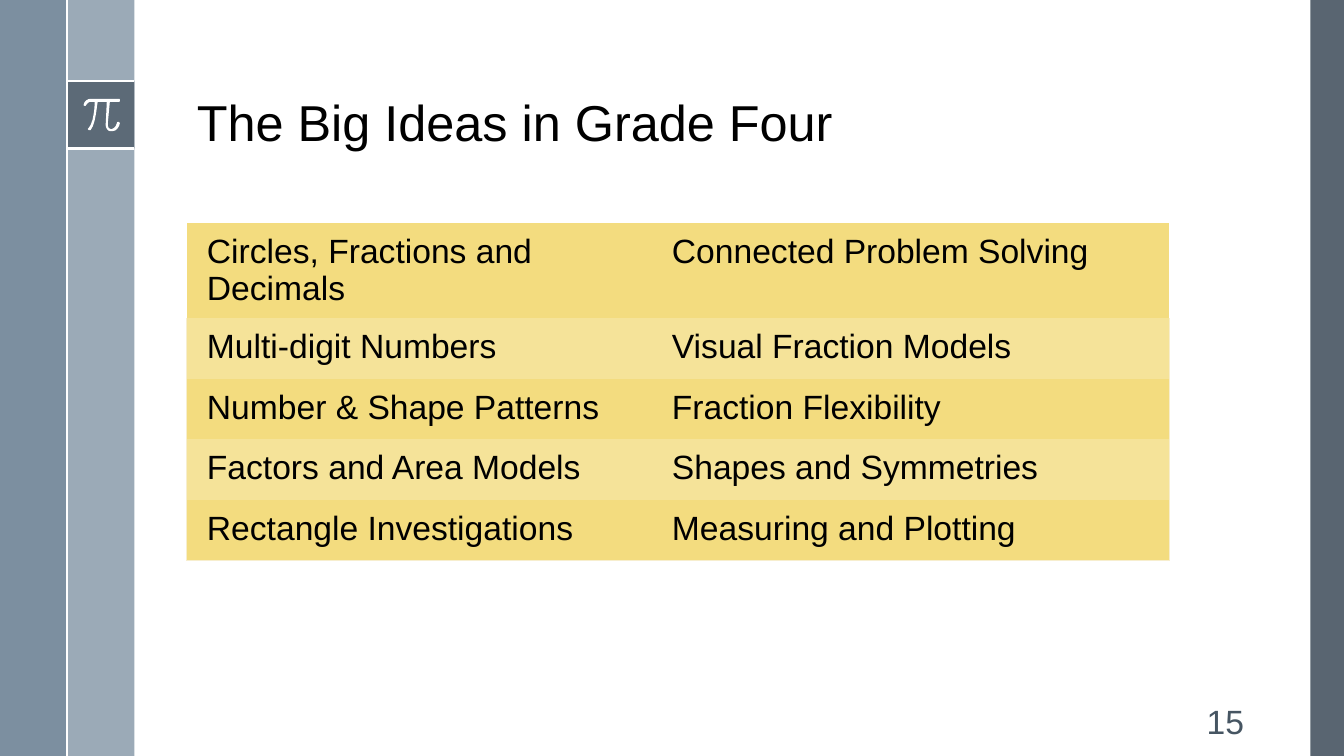
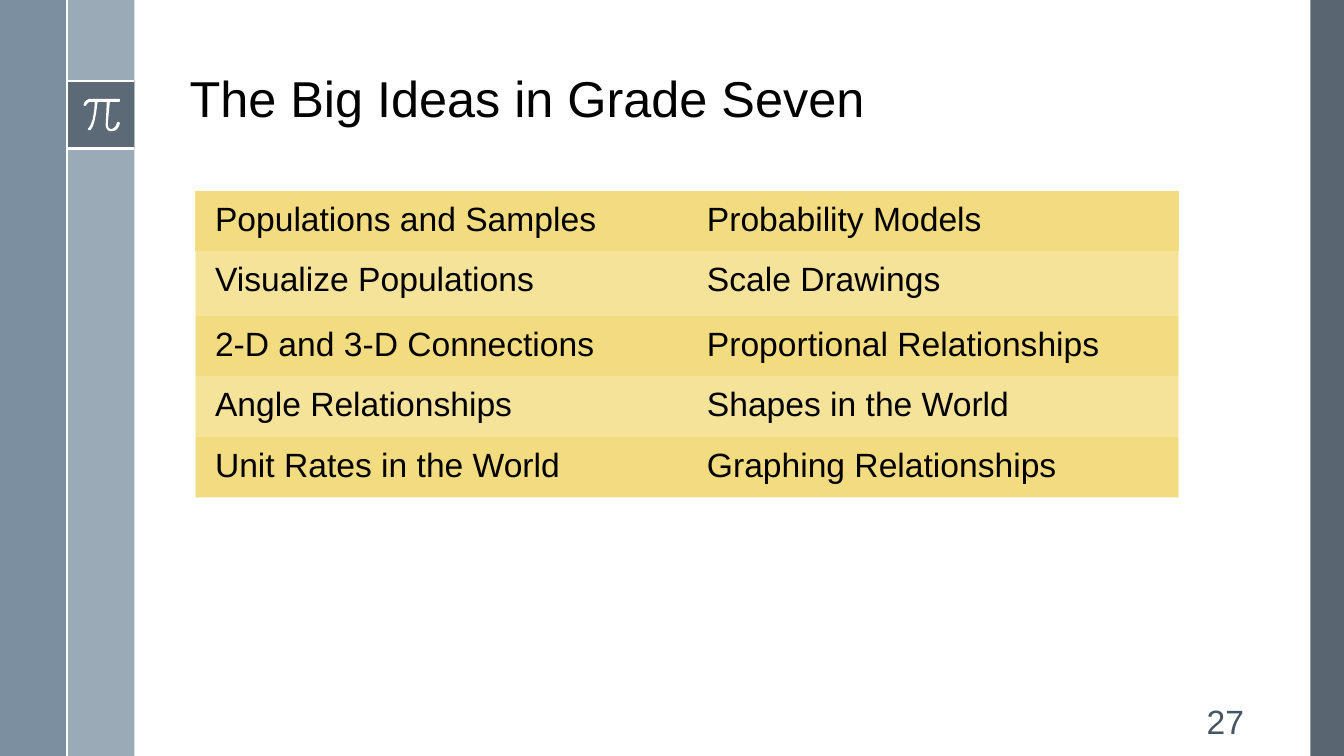
from dataclasses import dataclass

from lxml.etree import SubElement
from pptx import Presentation
from pptx.dml.color import RGBColor
from pptx.enum.shapes import MSO_CONNECTOR as Connector, MSO_SHAPE as Preset
from pptx.enum.text import MSO_ANCHOR as Anchor, MSO_AUTO_SIZE as AutoSize, PP_ALIGN as Align
from pptx.oxml.ns import qn
from pptx.util import Inches, Pt

# The slide is laid out on a square grid, 20 columns by 11.25 rows
SLIDE_W, SLIDE_H = Inches(13.33), Inches(7.5)
COLUMNS, ROWS = 20, 11.25
FONT = "Arial"
NO_STYLE = "{2D5ABB26-0587-4C30-8999-92F81FD0307C}"
COLORS = {
    "slate": "475562",
    "steel": "6A8093",
    "mist": "9BAAB7",
    "white": "FFFFFF",
    "text": "000000",
    "number": "465562",
    "gold": "F3DC7F",
    "pale_gold": "F5E399",
    "edge": "F7EECE",
}


@dataclass(frozen=True)
class Box:
    x: float
    y: float
    w: float
    h: float

    def emu(self) -> tuple[int, int, int, int]:
        return grid(self.x), grid(self.y), grid(self.w), grid(self.h)


@dataclass(frozen=True)
class Band:
    box: Box
    color: str
    opacity: int = 100


@dataclass(frozen=True)
class Rule:
    x1: float
    y1: float
    x2: float
    y2: float


@dataclass(frozen=True)
class GradePage:
    title: str
    title_box: Box
    table_x: float
    table_y: float
    widths: tuple[float, ...]
    heights: tuple[float, ...]
    ideas: tuple[tuple[str, str], ...]
    number: str


BANDS = (
    Band(Box(19.5, 0, 0.5, ROWS), "slate", 90),
    Band(Box(1, 0, 1, ROWS), "mist"),
    Band(Box(0, 0, 1, ROWS), "steel", 88),
    Band(Box(1, 1.21, 1, 1), "slate", 75),
)
RULES = (Rule(1, 1.21, 2, 1.21), Rule(1, 2.21, 2, 2.21), Rule(1, 0, 1, ROWS))
NUMBER_BOX = Box(17.66, 10.43, 1, 0.6)

# Outline of the pi sign in inches: two values for a line, six for a curve
PI_START = (1.18, 0.98)
PI_OUTLINE = (
    (0.9, 0.98),
    (0.85, 0.98, 0.83, 1.03, 0.83, 1.04),
    (0.83, 1.04, 0.83, 1.05, 0.84, 1.05),
    (0.85, 1.05),
    (0.85, 1.05, 0.87, 1.01, 0.9, 1.01),
    (0.94, 1.01),
    (0.94, 1.05, 0.93, 1.22, 0.88, 1.27),
    (0.87, 1.28, 0.87, 1.28, 0.88, 1.29),
    (0.9, 1.29),
    (0.95, 1.23, 0.96, 1.05, 0.97, 1.01),
    (1.06, 1.01),
    (1.05, 1.22),
    (1.05, 1.22, 1.04, 1.26, 1.07, 1.29),
    (1.08, 1.3, 1.09, 1.3, 1.1, 1.3),
    (1.12, 1.3),
    (1.17, 1.3, 1.19, 1.23, 1.19, 1.22),
    (1.19, 1.22, 1.18, 1.21, 1.18, 1.21),
    (1.17, 1.21, 1.16, 1.21, 1.16, 1.22),
    (1.16, 1.22, 1.15, 1.27, 1.11, 1.28),
    (1.1, 1.28, 1.09, 1.28, 1.08, 1.27),
    (1.07, 1.26, 1.07, 1.23, 1.07, 1.22),
    (1.09, 1.01),
    (1.18, 1.01),
    (1.19, 1.01, 1.19, 1, 1.19, 1),
    (1.19, 0.99, 1.19, 0.98, 1.18, 0.98),
)

PAGES = (
    GradePage(
        "The Big Ideas in Grade Four", Box(2.78, 1.47, 13.02, 0.87),
        2.78, 3.32, (6.92, 7.7), (1.42, 0.9, 0.9, 0.9, 0.9),
        (
            ("Circles, Fractions and Decimals", "Connected Problem Solving"),
            ("Multi-digit Numbers", "Visual Fraction Models"),
            ("Number & Shape Patterns", "Fraction Flexibility"),
            ("Factors and Area Models", "Shapes and Symmetries"),
            ("Rectangle Investigations", "Measuring and Plotting"),
        ),
        "15",
    ),
    GradePage(
        "The Big Ideas in Grade Seven", Box(2.67, 1, 12.35, 0.98),
        2.9, 2.84, (7.32, 7.32), (0.9, 0.96, 0.9, 0.9, 0.9),
        (
            ("Populations and Samples", "Probability Models"),
            ("Visualize Populations", "Scale Drawings"),
            ("2-D and 3-D Connections", "Proportional Relationships"),
            ("Angle Relationships", "Shapes in the World"),
            ("Unit Rates in the World", "Graphing Relationships"),
        ),
        "27",
    ),
)


def grid(cells: float) -> int:
    return round(cells * SLIDE_W / COLUMNS)


def rgb(name: str) -> RGBColor:
    return RGBColor.from_string(COLORS[name])


def paint(shape, color: str, opacity: int = 100) -> None:
    shape.shadow.inherit = False
    shape.line.fill.background()
    shape.fill.solid()
    shape.fill.fore_color.rgb = rgb(color)
    if opacity < 100:
        tint = shape.fill._xPr.find(qn("a:solidFill"))[0]
        SubElement(tint, qn("a:alpha"), val=str(opacity * 1000))


def style(paragraph, size: int, color: str, align=Align.LEFT) -> None:
    paragraph.alignment = align
    paragraph.font.name = FONT
    paragraph.font.size = Pt(size)
    paragraph.font.color.rgb = rgb(color)


def pi_points(steps: int = 6) -> list[tuple[float, float]]:
    points = [PI_START]
    for segment in PI_OUTLINE:
        if len(segment) == 2:
            points.append(segment)
            continue
        x0, y0 = points[-1]
        x1, y1, x2, y2, x3, y3 = segment
        for step in range(1, steps + 1):
            t = step / steps
            u = 1 - t
            a, b, c, d = u**3, 3 * u * u * t, 3 * u * t * t, t**3
            points.append((a * x0 + b * x1 + c * x2 + d * x3,
                           a * y0 + b * y1 + c * y2 + d * y3))
    return [(x * 1000, y * 1000) for x, y in points]


def draw_frame(slide, layout) -> None:
    """Draw the side bands and the pi sign, then hand them to the layout."""
    parts = []
    for band in BANDS:
        bar = slide.shapes.add_shape(Preset.RECTANGLE, *band.box.emu())
        paint(bar, band.color, band.opacity)
        parts.append(bar)
    for rule in RULES:
        divider = slide.shapes.add_connector(
            Connector.STRAIGHT, grid(rule.x1), grid(rule.y1), grid(rule.x2), grid(rule.y2))
        divider.line.color.rgb = rgb("white")
        divider.line.width = Pt(1.5)
        SubElement(divider._element.spPr, qn("a:effectLst"))
        parts.append(divider)
    start, *rest = pi_points()
    outline = slide.shapes.build_freeform(*start, scale=Inches(1) / 1000)
    outline.add_line_segments(rest, close=True)
    pi_sign = outline.convert_to_shape()
    paint(pi_sign, "white")
    parts.append(pi_sign)
    for part in parts:
        layout.shapes._spTree.append(part._element)


def draw_title(slide, page: GradePage) -> None:
    title = slide.shapes.title
    title.left, title.top, title.width, title.height = page.title_box.emu()
    frame = title.text_frame
    frame.text = page.title
    frame.word_wrap = True
    frame.auto_size = AutoSize.NONE
    frame.vertical_anchor = Anchor.BOTTOM
    frame.paragraphs[0].line_spacing = 0.9
    style(frame.paragraphs[0], 36, "text")


def set_borders(cell, sides: list[str]) -> None:
    properties = cell._tc.get_or_add_tcPr()
    for position, side in enumerate(sides):
        line = properties.makeelement(qn(f"a:ln{side}"), {"w": str(Pt(0.5))})
        fill = SubElement(line, qn("a:solidFill"))
        SubElement(fill, qn("a:srgbClr"), val=COLORS["edge"])
        properties.insert(position, line)


def draw_ideas(slide, page: GradePage) -> None:
    box = Box(page.table_x, page.table_y, sum(page.widths), sum(page.heights))
    last_row, last_column = len(page.heights) - 1, len(page.widths) - 1
    holder = slide.shapes.add_table(last_row + 1, last_column + 1, *box.emu())
    table = holder.table
    table._tbl.tblPr.find(qn("a:tableStyleId")).text = NO_STYLE
    for column, width in zip(table.columns, page.widths):
        column.width = grid(width)
    for r, (height, ideas) in enumerate(zip(page.heights, page.ideas)):
        table.rows[r].height = grid(height)
        for c, idea in enumerate(ideas):
            cell = table.cell(r, c)
            cell.text = idea
            cell.margin_left = cell.margin_right = Inches(0.2)
            cell.margin_top = cell.margin_bottom = Inches(0.1)
            cell.fill.solid()
            cell.fill.fore_color.rgb = rgb("pale_gold" if r % 2 else "gold")
            style(cell.text_frame.paragraphs[0], 24, "text")
            on_edge = {"L": r > 0 and c == 0, "R": r > 0 and c == last_column,
                       "B": r == last_row}
            set_borders(cell, [side for side, edge in on_edge.items() if edge])


def draw_number(slide, number: str) -> None:
    frame = slide.shapes.add_textbox(*NUMBER_BOX.emu()).text_frame
    frame.text = number
    frame.word_wrap = True
    frame.vertical_anchor = Anchor.MIDDLE
    style(frame.paragraphs[0], 24, "number", Align.RIGHT)


def main() -> None:
    deck = Presentation()
    deck.slide_width, deck.slide_height = SLIDE_W, SLIDE_H
    title_only = deck.slide_layouts[5]
    for index, page in enumerate(PAGES):
        slide = deck.slides.add_slide(title_only)
        if index == 0:
            draw_frame(slide, title_only)
        draw_title(slide, page)
        draw_ideas(slide, page)
        draw_number(slide, page.number)
    deck.save("out.pptx")


if __name__ == "__main__":
    main()
